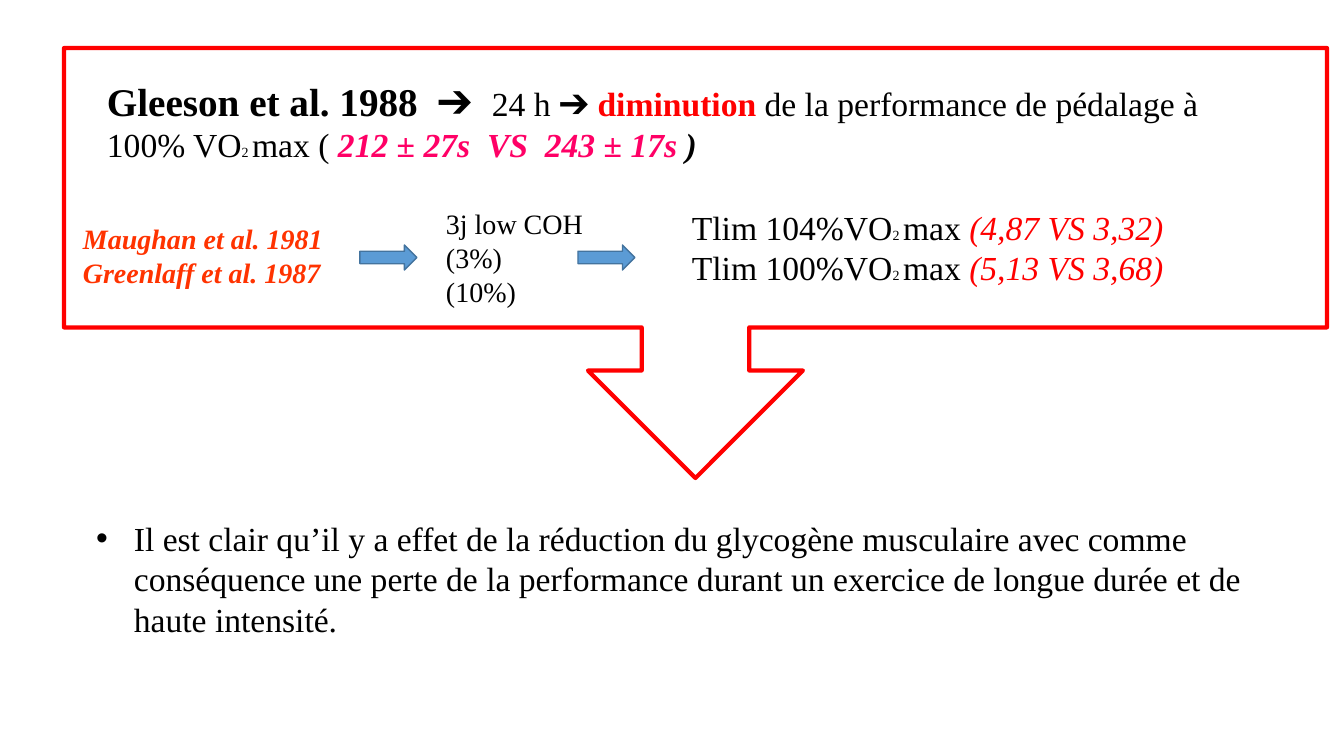
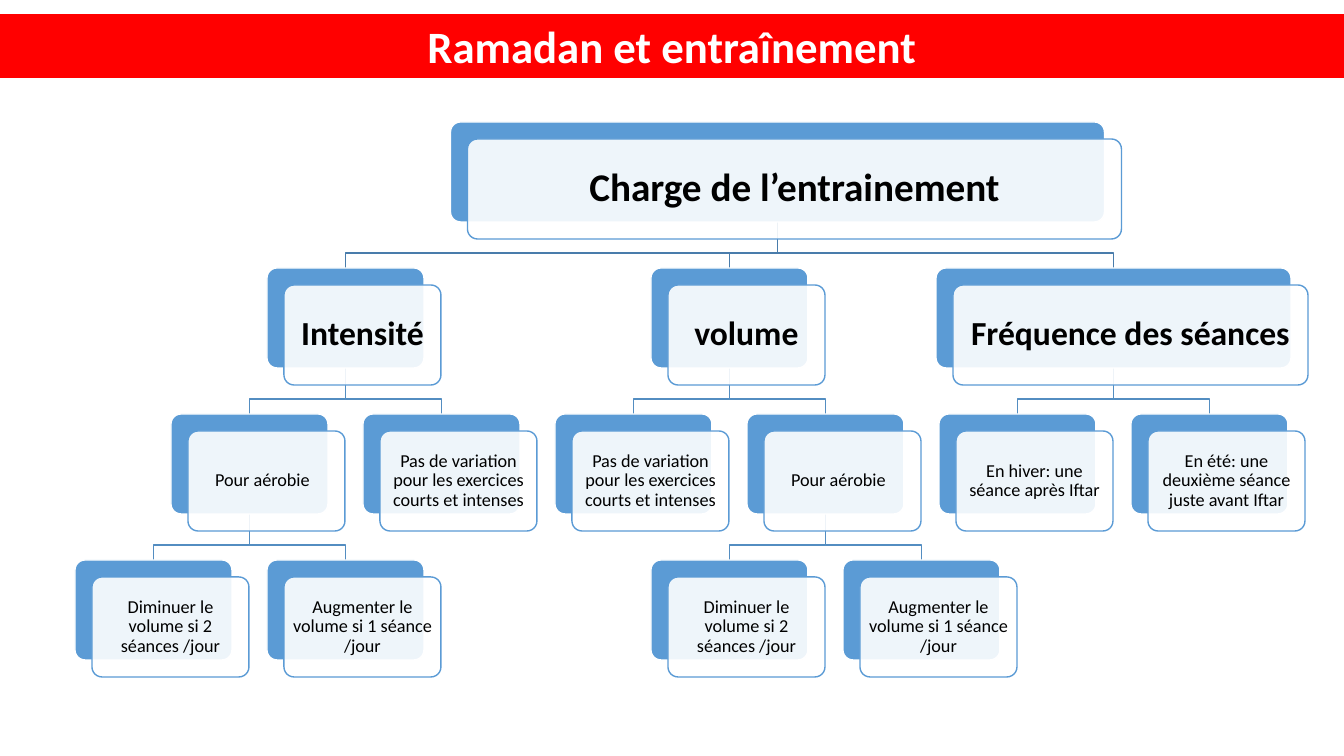
from collections import namedtuple
from dataclasses import dataclass

from lxml.etree import SubElement
from pptx import Presentation
from pptx.dml.color import RGBColor
from pptx.enum.shapes import MSO_SHAPE
from pptx.enum.text import MSO_ANCHOR, MSO_AUTO_SIZE, PP_ALIGN
from pptx.oxml.ns import qn
from pptx.util import Emu, Pt

PX_PER_INCH = 100.8
SLIDE_WIDTH, SLIDE_HEIGHT = 1344, 756

BLACK = RGBColor(0x00, 0x00, 0x00)
WHITE = RGBColor(0xFF, 0xFF, 0xFF)
RED = RGBColor(0xFF, 0x00, 0x00)
ORANGE = RGBColor(0xFF, 0x33, 0x00)
PINK = RGBColor(0xFF, 0x00, 0x66)
BLUE = RGBColor(0x5B, 0x9B, 0xD5)
DARK_BLUE = RGBColor(0x43, 0x73, 0x9E)
ROOT_LINK = RGBColor(0x49, 0x7C, 0xAB)
LINK = RGBColor(0x53, 0x8D, 0xC1)

SERIF, SANS = "Times New Roman", "Calibri"

COLUMN, LEVEL = 96, 146
CARD_WIDTH, CARD_HEIGHT = 157, 100
CARD_SHIFT, LINK_DROP = 17, 31
TEXT_SIZES = (28, 24, 13, 13)
TEXT_MARGINS = (12, 10, 5, 5)


class Box(namedtuple("Box", "left top width height")):
    """A rectangle in px."""

    def inner(self, left, top, width, height):
        """Return a rectangle placed from this one's top left corner."""
        return Box(self.left + left, self.top + top, width, height)

    def emu(self):
        """Return the four lengths in EMU."""
        return [px(value) for value in self]


@dataclass
class Card:
    """A node of the tree; column counts half card steps."""

    text: str
    column: float
    children: tuple = ()
    width: int = CARD_WIDTH


def px(value):
    """Turn px into EMU."""
    return Emu(round(value * 914400 / PX_PER_INCH))


def set_font(font, size=None, color=None, name=None, bold=None, italic=None):
    """Set the given font properties only."""
    if size:
        font.size = Pt(size)
    if color is not None:
        font.color.rgb = color
    if name:
        font.name = name
    if bold is not None:
        font.bold = bold
    if italic is not None:
        font.italic = italic


def add_text(page, box, lines, **base):
    """Add a serif text box; a line is a list of (text, font changes)."""
    frame = page.shapes.add_textbox(*box.emu()).text_frame
    frame.word_wrap = True
    for index, line in enumerate(lines):
        para = frame.add_paragraph() if index else frame.paragraphs[0]
        set_font(para.font, **{"name": SERIF, "color": BLACK, **base})
        for text, changes in line:
            span = para.add_run()
            span.text = text
            set_font(span.font, **changes)


def add_shape(page, kind, box, fill, line, weight=1):
    """Add a flat preset shape; no fill colour leaves it hollow."""
    shape = page.shapes.add_shape(kind, *box.emu())
    shape.shadow.inherit = False
    if fill is None:
        shape.fill.background()
    else:
        shape.fill.solid()
        shape.fill.fore_color.rgb = fill
    shape.line.color.rgb = line
    shape.line.width = Pt(weight)
    return shape


def place(shape, box):
    """Move a placeholder to a box."""
    shape.left, shape.top, shape.width, shape.height = box.emu()
    shape.text_frame.auto_size = MSO_AUTO_SIZE.NONE


def study_callout(page, box):
    """Draw the framed study results with the arrow leading down."""
    red, small = {"color": RED}, {"size": 10}
    add_text(page, box.inner(33, 24, 1144, 139), [[
        ("Gleeson et al. 1988  ➔  ", {"size": 28, "bold": True}),
        ("24 h ", {}),
        ("➔ ", {"bold": True}),
        ("diminution ", {"bold": True, **red}),
        ("de la performance de pédalage à 100% VO", {}),
        ("2 ", small),
        ("max ( ", {}),
        ("212 ± 27s  VS  243 ± 17s ", {"color": PINK, "bold": True, "italic": True}),
        (")", {"bold": True, "italic": True}),
    ]], size=24)
    authors = ("Maughan et al. 1981", "Greenlaff et al. 1987")
    add_text(page, box.inner(9, 169, 287, 78), [[(name, {})] for name in authors],
             size=20, color=ORANGE, bold=True, italic=True)
    diet = ("3j low COH", "(3%)", "(10%)")
    add_text(page, box.inner(372, 154, 173, 112), [[(text, {})] for text in diet], size=20)
    limits = (("Tlim 104%VO", "(4,87 VS 3,32)"), ("Tlim 100%VO", "(5,13 VS 3,68)"))
    add_text(page, box.inner(618, 154, 660, 92), [
        [(test, {}), ("2 ", small), ("max ", {}), (times, {"italic": True, **red})]
        for test, times in limits
    ], size=24)
    for left in (296, 514):
        add_shape(page, MSO_SHAPE.RIGHT_ARROW, box.inner(left, 197, 57, 25), BLUE, DARK_BLUE)
    add_shape(page, MSO_SHAPE.DOWN_ARROW_CALLOUT, box, None, RED, 3)


def conclusion(body, box, text):
    """Fill the body placeholder with one bulleted sentence."""
    place(body, box)
    body.text_frame.text = text
    para = body.text_frame.paragraphs[0]
    para.space_before = Pt(0)
    set_font(para.font, 24, BLACK, SERIF)


def title_band(title, box, text):
    """Make the title placeholder a red band."""
    place(title, box)
    title.fill.solid()
    title.fill.fore_color.rgb = RED
    title.text_frame.text = text
    para = title.text_frame.paragraphs[0]
    para.alignment = PP_ALIGN.CENTER
    set_font(para.font, 32, WHITE, SANS, bold=True)


def card_box(box, card, level):
    """Return the place of a card's blue back in the tree."""
    center = CARD_WIDTH / 2 + card.column * COLUMN
    return box.inner(center - card.width / 2, level * LEVEL, card.width, CARD_HEIGHT)


def draw_links(page, box, card, level=0):
    """Draw the elbow lines from a card to all below it."""
    start = card_box(box, card, level)
    start_x, start_y = start.left + start.width / 2, start.top + start.height
    for child in card.children:
        end = card_box(box, child, level + 1)
        end_x = end.left + end.width / 2
        points = [(start_x, start_y + LINK_DROP), (end_x, start_y + LINK_DROP), (end_x, end.top)]
        builder = page.shapes.build_freeform(px(start_x), px(start_y))
        builder.add_line_segments([(px(x), px(y)) for x, y in points], close=False)
        link = builder.convert_to_shape()
        link.shadow.inherit = False
        link.fill.background()
        link.line.color.rgb = LINK if level else ROOT_LINK
        link.line.width = Pt(1)
        draw_links(page, box, child, level + 1)


def draw_cards(page, box, card, level=0):
    """Draw a card with its blue back, then all below it."""
    back_box = card_box(box, card, level)
    front_box = back_box.inner(CARD_SHIFT, CARD_SHIFT, card.width, CARD_HEIGHT)
    back = add_shape(page, MSO_SHAPE.ROUNDED_RECTANGLE, back_box, BLUE, WHITE)
    front = add_shape(page, MSO_SHAPE.ROUNDED_RECTANGLE, front_box, WHITE, BLUE)
    for shape in (back, front):
        shape.adjustments[0] = 0.1
    color = front.element.spPr.find(qn("a:solidFill"))[0]
    SubElement(color, qn("a:alpha")).set("val", "90000")

    frame = front.text_frame
    frame.word_wrap = True
    frame.vertical_anchor = MSO_ANCHOR.MIDDLE
    margin = px(TEXT_MARGINS[level])
    frame.margin_left = frame.margin_right = margin
    frame.margin_top = frame.margin_bottom = margin
    frame.text = card.text
    para = frame.paragraphs[0]
    para.alignment = PP_ALIGN.CENTER
    para.line_spacing = 0.9
    set_font(para.font, TEXT_SIZES[level], BLACK, SANS, bold=level < 2)
    for child in card.children:
        draw_cards(page, box, child, level + 1)


def aerobic_branch(column):
    """Return the aerobic card with its two volume rules."""
    return Card("Pour aérobie  ", column, (
        Card("Diminuer le volume si 2 séances /jour", column - 1),
        Card("Augmenter le volume si 1 séance /jour", column + 1),
    ))


def training_load():
    """Return the tree of the training load."""
    unchanged = "Pas de variation pour les exercices courts et intenses"
    return Card("Charge de l’entrainement", 6.5, (
        Card("Intensité", 2, (aerobic_branch(1), Card(unchanged, 3))),
        Card("volume", 6, (Card(unchanged, 5), aerobic_branch(7))),
        Card("Fréquence des séances", 10, (
            Card("En hiver: une séance après Iftar", 9),
            Card("En été: une deuxième séance juste avant Iftar", 11),
        ), 355),
    ), 654)


def glycogen_slide(deck):
    """Build the slide on reduced glycogen."""
    page = deck.slides.add_slide(deck.slide_layouts[1])
    title = page.shapes.title.element
    title.getparent().remove(title)
    study_callout(page, Box(64, 48, 1263, 430))
    conclusion(page.placeholders[1], Box(86, 513, 1219, 173),
               "Il est clair qu’il y a effet de la réduction du glycogène musculaire "
               "avec comme conséquence une perte de la performance durant un exercice "
               "de longue durée et de haute intensité.")


def training_slide(deck):
    """Build the slide on training during Ramadan."""
    page = deck.slides.add_slide(deck.slide_layouts[5])
    title_band(page.shapes.title, Box(0, 14, SLIDE_WIDTH, 64), "Ramadan et entraînement")
    tree_box = Box(75, 122, 1233, 555)
    tree = training_load()
    draw_links(page, tree_box, tree)
    draw_cards(page, tree_box, tree)


def main():
    """Build and save the deck."""
    deck = Presentation()
    deck.slide_width, deck.slide_height = px(SLIDE_WIDTH), px(SLIDE_HEIGHT)
    glycogen_slide(deck)
    training_slide(deck)
    deck.save("out.pptx")


if __name__ == "__main__":
    main()
